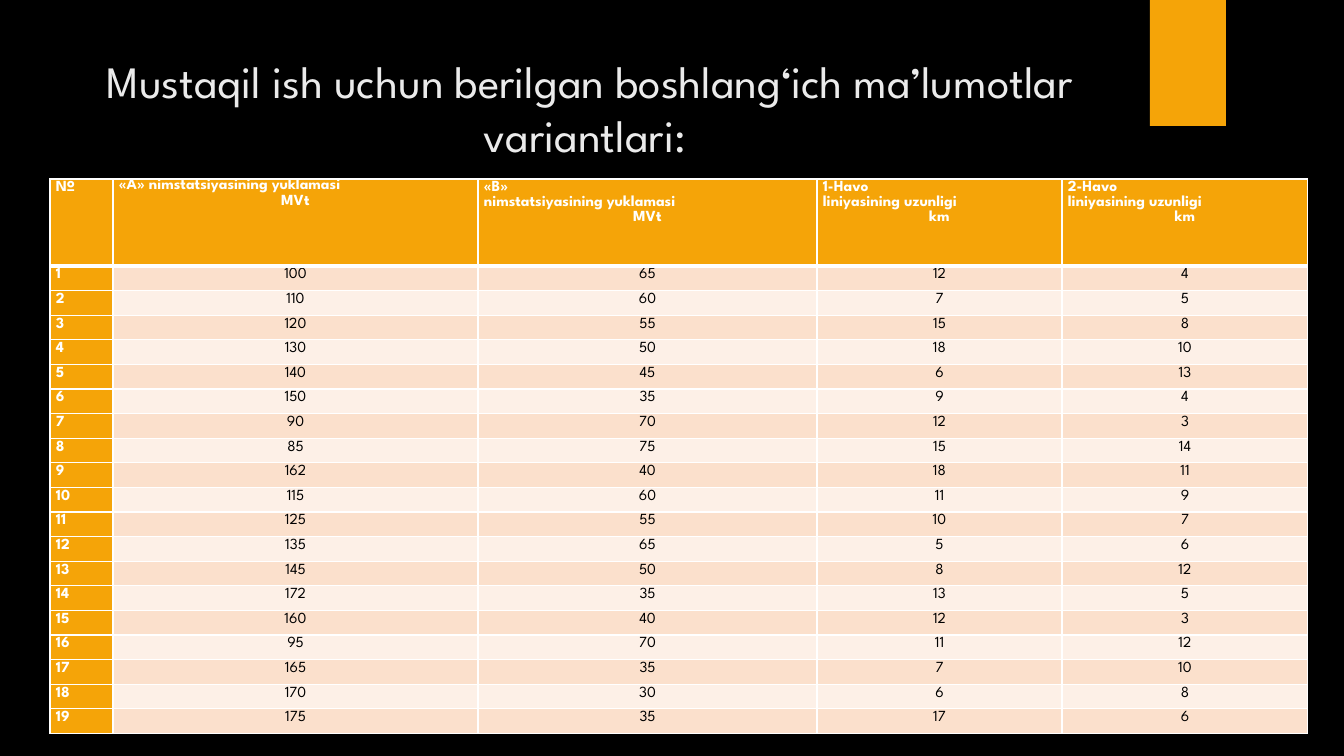
import pptx
import pptx.util
import pptx.dml.color
import pptx.enum.shapes
import pptx.enum.text
import pptx.oxml

RGBColor = pptx.dml.color.RGBColor
ALIGN = pptx.enum.text.PP_ALIGN
ANCHOR = pptx.enum.text.MSO_ANCHOR

TITLE = "Mustaqil ish uchun berilgan boshlang‘ich ma’lumotlar variantlari: "
HEADERS = [
    ["№ "],
    ["«A» nimstatsiyasining yuklamasi", "MVt "],
    ["«B»", "nimstatsiyasining yuklamasi", "MVt "],
    ["1-Havo", "liniyasining uzunligi", "km "],
    ["2-Havo", "liniyasining uzunligi", "km "],
]
VARIANTS = [
    (100, 65, 12, 4), (110, 60, 7, 5), (120, 55, 15, 8), (130, 50, 18, 10),
    (140, 45, 6, 13), (150, 35, 9, 4), (90, 70, 12, 3), (85, 75, 15, 14),
    (162, 40, 18, 11), (115, 60, 11, 9), (125, 55, 10, 7), (135, 65, 5, 6),
    (145, 50, 8, 12), (172, 35, 13, 5), (160, 40, 12, 3), (95, 70, 11, 12),
    (165, 35, 7, 10), (170, 30, 6, 8), (175, 35, 17, 6),
]

FONT = "League Spartan"
BLACK = RGBColor(0, 0, 0)
WHITE = RGBColor(255, 255, 255)
TITLE_GRAY = RGBColor(0xEB, 0xEB, 0xEB)
ORANGE = RGBColor(0xF5, 0xA4, 0x08)
BANDS = [RGBColor(0xFB, 0xE0, 0xCC), RGBColor(0xFD, 0xF0, 0xE7)]

SLIDE_SIZE = (1344, 756)
TITLE_BOX = (72, 50, 1037, 115)
RIBBON_BOX = (1150, 0, 76, 126)
TABLE_LEFT, TABLE_TOP = 50, 179
COLUMN_WIDTHS = [63, 365, 339, 245, 246]
HEADER_HEIGHT, BODY_HEIGHT = 87, 468
CELL_LEFT, CELL_RIGHT = 6, 2


def px(length):
    return pptx.util.Emu(round(length * 914400 / 100.8))


def write_text(frame, text, size=11, color=BLACK, bold=False, align=ALIGN.CENTER, spacing=1.15, first=True):
    paragraph = frame.paragraphs[0] if first else frame.add_paragraph()
    paragraph.alignment = align
    paragraph.line_spacing = spacing
    run = paragraph.add_run()
    run.text = text
    run.font.name = FONT
    run.font.size = pptx.util.Pt(size)
    run.font.bold = bold
    run.font.color.rgb = color


def format_cell(cell, fill, top=1, bottom=1):
    cell.margin_left, cell.margin_right = px(CELL_LEFT), px(CELL_RIGHT)
    cell.margin_top = cell.margin_bottom = 0
    cell.vertical_anchor = ANCHOR.TOP
    cell.fill.solid()
    cell.fill.fore_color.rgb = fill
    properties = cell._tc.get_or_add_tcPr()
    for position, (side, width) in enumerate([("L", 1), ("R", 1), ("T", top), ("B", bottom)]):
        properties.insert(position, pptx.oxml.parse_xml(
            f'<a:ln{side} xmlns:a="http://schemas.openxmlformats.org/drawingml/2006/main" '
            f'w="{pptx.util.Pt(width)}"><a:solidFill><a:srgbClr val="{WHITE}"/></a:solidFill></a:ln{side}>'))


def add_variant_table(slide):
    frame = slide.shapes.add_table(
        len(VARIANTS) + 1, len(HEADERS), px(TABLE_LEFT), px(TABLE_TOP),
        px(sum(COLUMN_WIDTHS)), px(HEADER_HEIGHT + BODY_HEIGHT))
    table = frame.table
    table.first_col = True
    for column, width in zip(table.columns, COLUMN_WIDTHS):
        column.width = px(width)
    for row in table.rows:
        row.height = px(BODY_HEIGHT / len(VARIANTS))
    table.rows[0].height = px(HEADER_HEIGHT)

    for column, lines in enumerate(HEADERS):
        cell = table.cell(0, column)
        format_cell(cell, ORANGE, bottom=3)
        for index, line in enumerate(lines):
            is_unit = index > 0 and index == len(lines) - 1
            is_name = len(lines) > 1 and index == len(lines) - 2
            write_text(cell.text_frame, line, color=WHITE, bold=True,
                       align=ALIGN.CENTER if is_unit else ALIGN.LEFT,
                       spacing=0.97 if is_name else 1.15, first=index == 0)

    for number, values in enumerate(VARIANTS, 1):
        top = 3 if number == 1 else 1
        number_cell = table.cell(number, 0)
        format_cell(number_cell, ORANGE, top=top)
        write_text(number_cell.text_frame, str(number), color=WHITE, bold=True, align=ALIGN.LEFT)
        for column, value in enumerate(values, 1):
            cell = table.cell(number, column)
            format_cell(cell, BANDS[(number - 1) % 2], top=top)
            write_text(cell.text_frame, f"{value} ")


def main():
    presentation = pptx.Presentation()
    presentation.slide_width, presentation.slide_height = map(px, SLIDE_SIZE)
    slide = presentation.slides.add_slide(presentation.slide_layouts[5])
    slide.background.fill.solid()
    slide.background.fill.fore_color.rgb = BLACK

    ribbon = slide.shapes.add_shape(pptx.enum.shapes.MSO_SHAPE.RECTANGLE, *map(px, RIBBON_BOX))
    ribbon.shadow.inherit = False
    ribbon.fill.solid()
    ribbon.fill.fore_color.rgb = ORANGE
    ribbon.line.fill.background()

    title = slide.shapes.title
    title.left, title.top, title.width, title.height = map(px, TITLE_BOX)
    title.text_frame.auto_size = pptx.enum.text.MSO_AUTO_SIZE.NONE
    title.text_frame.vertical_anchor = ANCHOR.MIDDLE
    write_text(title.text_frame, TITLE, size=32, color=TITLE_GRAY, spacing=1.0)

    add_variant_table(slide)
    presentation.save("out.pptx")


if __name__ == "__main__":
    main()
